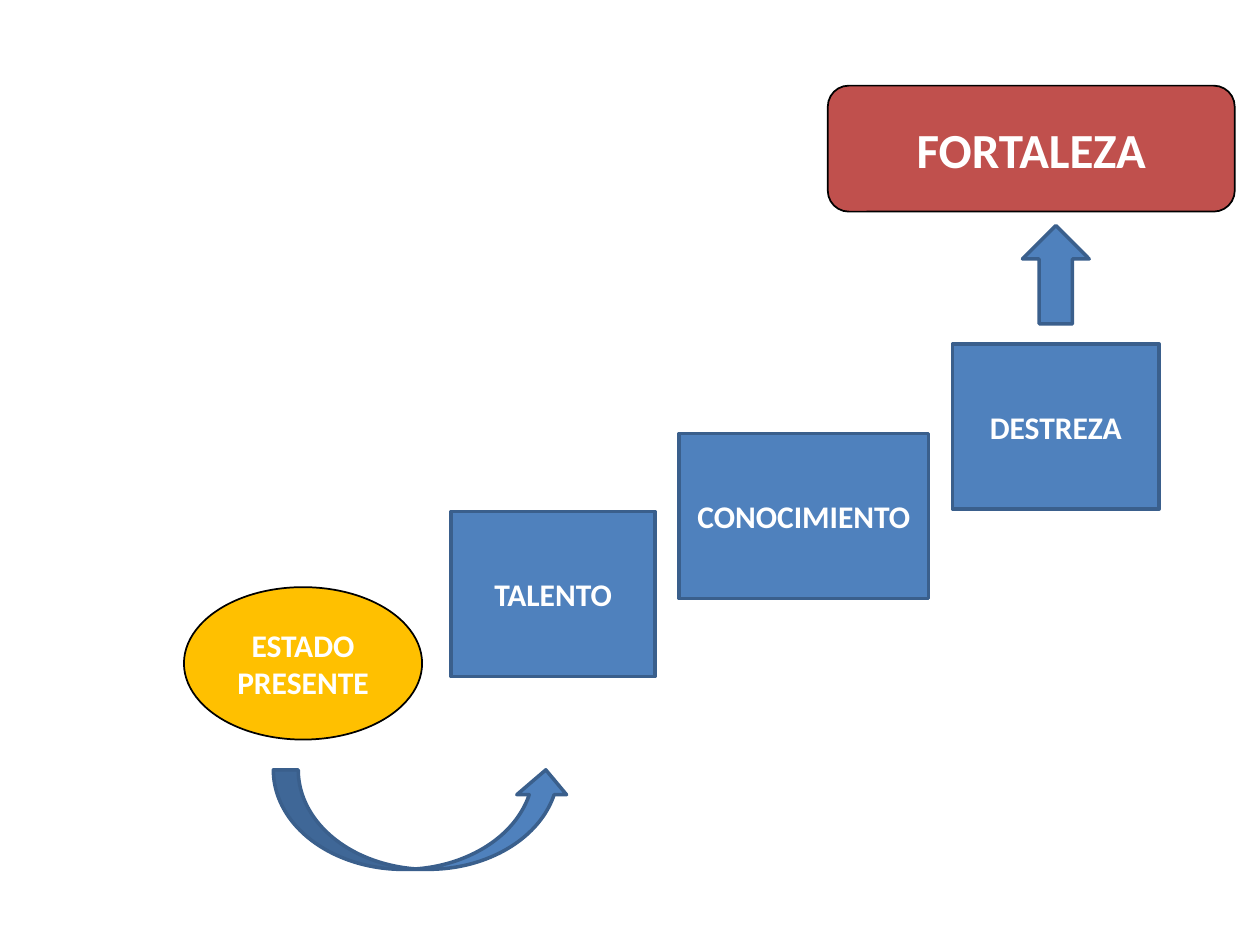
from pptx import Presentation
from pptx import util as u
from pptx.dml.color import RGBColor
from pptx.enum import shapes, text

BLUE = RGBColor(0x4F, 0x81, 0xBD)
DARK_BLUE = RGBColor(0x3A, 0x5F, 0x8C)
GOLD = RGBColor(0xFF, 0xC0, 0x00)
RED = RGBColor(0xC0, 0x50, 0x4D)
BLACK = RGBColor(0, 0, 0)
WHITE = RGBColor(0xFF, 0xFF, 0xFF)
FONT = "Calibri"

# The slide is a grid of 100 columns by 75 rows
WIDTH, HEIGHT = u.Inches(10), u.Inches(7.5)
COLUMN, ROW = WIDTH / 100, HEIGHT / 75
SHAPE = shapes.MSO_SHAPE


def add_figure(slide, kind, box, fill=BLUE, line=DARK_BLUE, line_width=2,
               label=None, size=18):
    """Draw one preset shape in a (column, row, columns, rows) box."""
    left, top, width, height = box
    shape = slide.shapes.add_shape(
        kind, round(left * COLUMN), round(top * ROW),
        round(width * COLUMN), round(height * ROW))
    shape.shadow.inherit = False
    shape.fill.solid()
    shape.fill.fore_color.rgb = fill
    shape.line.color.rgb = line
    shape.line.width = u.Pt(line_width)
    if label:
        frame = shape.text_frame
        frame.word_wrap = True
        frame.vertical_anchor = text.MSO_ANCHOR.MIDDLE
        paragraph = frame.paragraphs[0]
        paragraph.text = label
        paragraph.alignment = text.PP_ALIGN.CENTER
        font = paragraph.font
        font.name, font.size, font.bold = FONT, u.Pt(size), True
        font.color.rgb = WHITE


def add_start(slide, box):
    """Present state, with the curved arrow below it to the first step."""
    left, top, width, height = box
    add_figure(slide, SHAPE.OVAL, box, GOLD, BLACK, 1, "ESTADO PRESENTE")
    add_figure(slide, SHAPE.CURVED_UP_ARROW,
               (left + 7.1, top + height + 2.4, 23.6, 7.9))


def add_staircase(slide, box, gap=1.9):
    """Rising steps, side by side, with an arrow above the last one."""
    left, top, _, height = box
    steps = [("TALENTO", 16.2, 13.3), ("CONOCIMIENTO", 19.8, 7.1),
             ("DESTREZA", 16.4, 0)]
    for label, width, drop in steps:
        add_figure(slide, SHAPE.RECTANGLE, (left, top + drop, width, height),
                   label=label)
        center = left + width / 2
        left += width + gap
    arrow_width = 5.3
    add_figure(slide, SHAPE.UP_ARROW,
               (center - arrow_width / 2, top - 9.4, arrow_width, 7.8))


def add_goal(slide, box):
    """Strength reached at the top."""
    add_figure(slide, SHAPE.ROUNDED_RECTANGLE, box, RED, BLACK, 1,
               "FORTALEZA", 28)


def main():
    presentation = Presentation()
    presentation.slide_width, presentation.slide_height = WIDTH, HEIGHT
    slide = presentation.slides.add_slide(presentation.slide_layouts[6])
    add_start(slide, (14.6, 46.6, 18.9, 12.1))
    add_goal(slide, (65.7, 6.8, 32.3, 10))
    add_staircase(slide, (35.8, 27.3, 56.2, 13.1))
    presentation.save("out.pptx")


if __name__ == "__main__":
    main()
